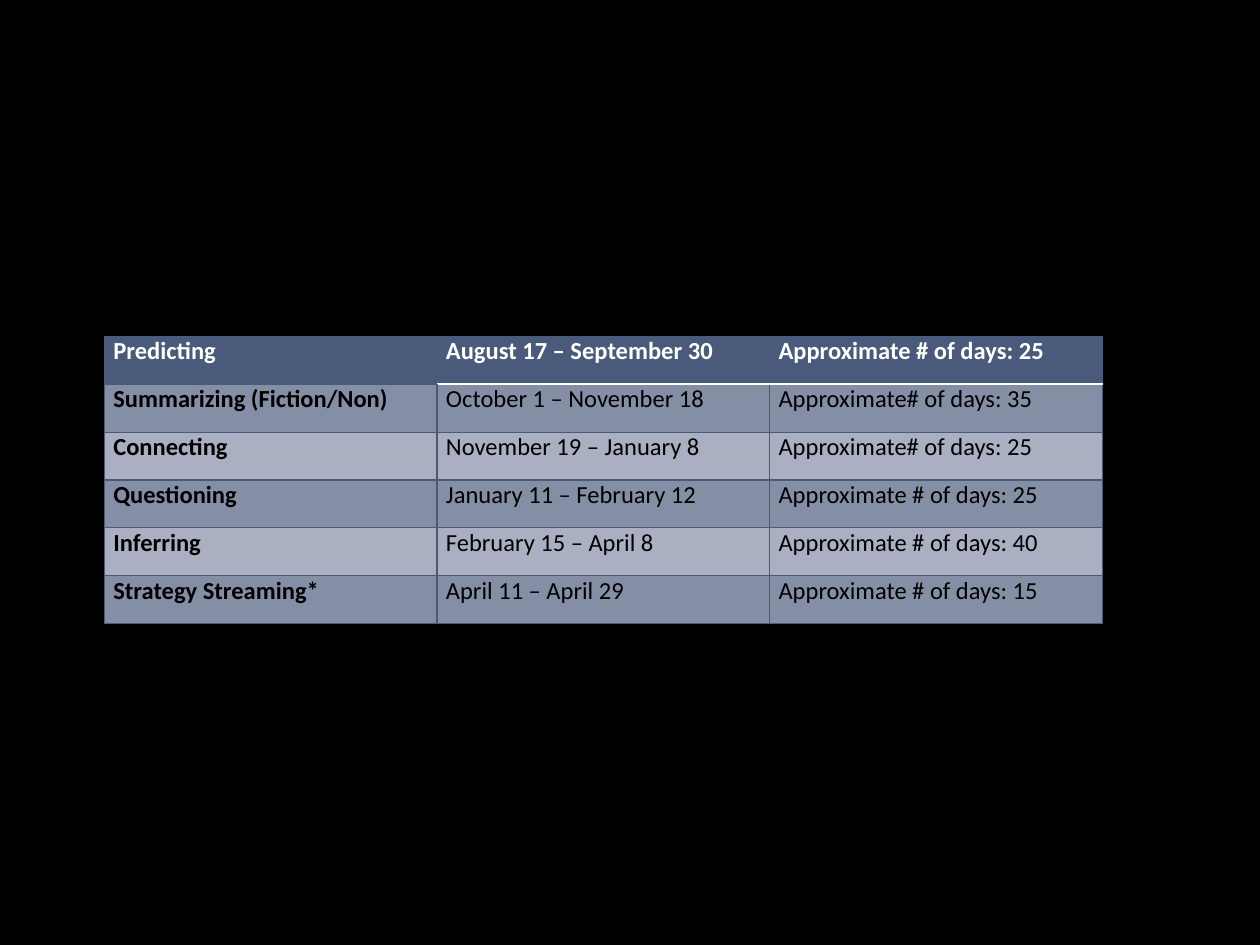
"""Build a slide with the yearly schedule of reading strategies."""
import dataclasses

import lxml.etree
import pptx
import pptx.dml.color
import pptx.enum.text
import pptx.oxml.ns
import pptx.util

NAVY, WHITE, BLACK = "4A5A7A", "FFFFFF", "000000"
BANDS = ("AAB0C2", "848EA5")
SLIDE_WIDTH, SLIDE_HEIGHT = pptx.util.Inches(10), pptx.util.Inches(7.5)
COLUMN_WIDTH, ROW_HEIGHT = pptx.util.Inches(2.64), pptx.util.Inches(0.38)
THIN, THICK = 0.75, 1.5


@dataclasses.dataclass(frozen=True)
class Unit:
    strategy: str
    dates: str
    days: str


UNITS = (
    Unit("Predicting", "August 17 – September 30", "Approximate # of days: 25"),
    Unit("Summarizing (Fiction/Non)", "October 1 – November 18", "Approximate# of days: 35"),
    Unit("Connecting", "November 19 – January 8", "Approximate# of days: 25"),
    Unit("Questioning", "January 11 – February 12", "Approximate # of days: 25"),
    Unit("Inferring", "February 15 – April 8", "Approximate # of days: 40"),
    Unit("Strategy Streaming*", "April 11 – April 29", "Approximate # of days: 15"),
)


def color(value: str) -> pptx.dml.color.RGBColor:
    return pptx.dml.color.RGBColor.from_string(value)


def add_border(cell, side: str, value: str, width: float) -> None:
    qn = pptx.oxml.ns.qn
    line = lxml.etree.SubElement(
        cell._tc.get_or_add_tcPr(), qn(f"a:ln{side}"), w=str(pptx.util.Pt(width)))
    fill = lxml.etree.SubElement(line, qn("a:solidFill"))
    lxml.etree.SubElement(fill, qn("a:srgbClr"), val=value)


def draw_borders(cell, row: int, column: int) -> None:
    header_rule = (WHITE, THICK) if column else (NAVY, THIN)
    borders = {
        "L": (NAVY, THICK if column == 1 and row else THIN),
        "R": (NAVY, THICK if column == 0 and row else THIN),
        "T": header_rule if row == 1 else (NAVY, THIN),
        "B": header_rule if row == 0 else (NAVY, THIN),
    }
    for side, (value, width) in borders.items():
        add_border(cell, side, value, width)


def fill_cell(cell, text: str, row: int, column: int) -> None:
    draw_borders(cell, row, column)
    cell.fill.solid()
    cell.fill.fore_color.rgb = color(BANDS[row % 2] if row else NAVY)
    cell.margin_left = cell.margin_right = pptx.util.Inches(0.07)
    cell.margin_top = cell.margin_bottom = 0
    cell.vertical_anchor = pptx.enum.text.MSO_ANCHOR.TOP
    cell.text = text
    font = cell.text_frame.paragraphs[0].font
    font.name, font.size = "Calibri", pptx.util.Pt(14)
    font.bold = row == 0 or column == 0
    font.color.rgb = color(BLACK if row else WHITE)


def add_schedule(slide, units: tuple[Unit, ...]) -> None:
    column_count = len(dataclasses.fields(Unit))
    schedule = slide.shapes.add_table(
        len(units), column_count,
        int(SLIDE_WIDTH * 0.083), int(SLIDE_HEIGHT * 0.356),
        COLUMN_WIDTH * column_count, ROW_HEIGHT * len(units)).table
    schedule.horz_banding = schedule.first_row = False
    for row, unit in enumerate(units):
        for column, text in enumerate(dataclasses.astuple(unit)):
            fill_cell(schedule.cell(row, column), text, row, column)


def main() -> None:
    presentation = pptx.Presentation()
    presentation.slide_width, presentation.slide_height = SLIDE_WIDTH, SLIDE_HEIGHT
    slide = presentation.slides.add_slide(presentation.slide_layouts[6])
    slide.background.fill.solid()
    slide.background.fill.fore_color.rgb = color(BLACK)
    add_schedule(slide, UNITS)
    presentation.save("out.pptx")


if __name__ == "__main__":
    main()
